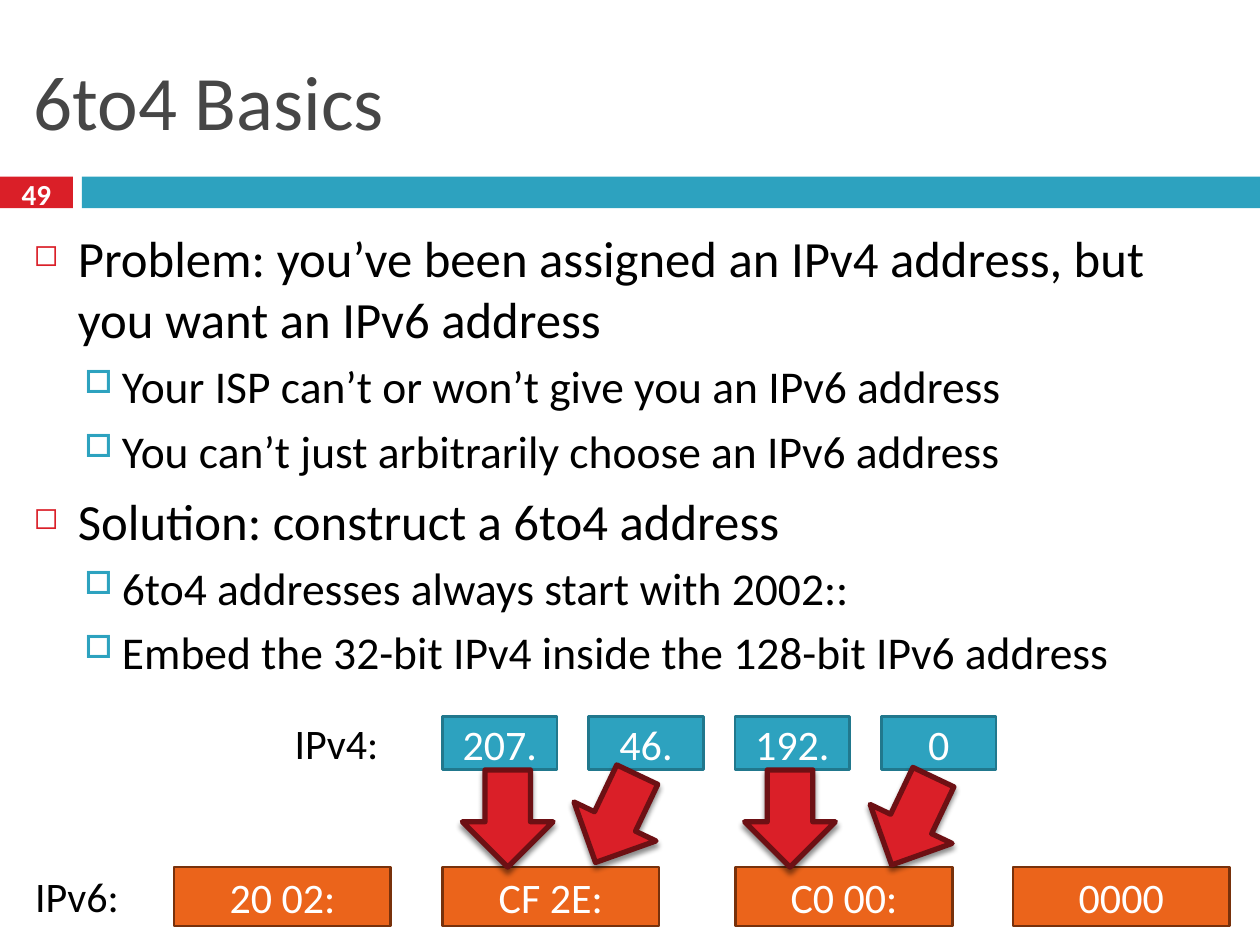
from lxml import etree
from pptx import Presentation
from pptx.dml.color import RGBColor
from pptx.enum import shapes, text
from pptx.oxml.ns import qn
from pptx.util import Cm, Pt

RED = RGBColor(0xDA, 0x1F, 0x28)
DARK_RED = RGBColor(0x6D, 0x10, 0x14)
TEAL = RGBColor(0x2D, 0xA2, 0xBF)
DARK_TEAL = RGBColor(0x21, 0x78, 0x8D)
ORANGE = RGBColor(0xEB, 0x64, 0x1B)
BROWN = RGBColor(0x78, 0x31, 0x0B)
GREY = RGBColor(0x46, 0x46, 0x46)
BLACK = RGBColor(0, 0, 0)
WHITE = RGBColor(0xFF, 0xFF, 0xFF)

# Per level: size, space before, left indent, hanging indent, bullet, colour, bullet size
LEVELS = [
    (29, 7, 0.89, 0.89, "◻", RED, 60),
    (26, 5.5, 1.78, 0.76, "□", TEAL, 70),
]
POINTS = [
    (0, "Problem: you’ve been assigned an IPv4 address, but you want an IPv6 address"),
    (1, "Your ISP can’t or won’t give you an IPv6 address"),
    (1, "You can’t just arbitrarily choose an IPv6 address"),
    (0, "Solution: construct a 6to4 address"),
    (1, "6to4 addresses always start with 2002::"),
    (1, "Embed the 32-bit IPv4 inside the 128-bit IPv6 address"),
]

IPV4_TOP, IPV6_TOP = 14.45, 17.48
IPV4_LEFT, IPV4_STEP = 8.92, 2.95
IPV4_BYTES = ["207.", "46.", "192.", "0"]
IPV6_GROUPS = [(3.51, "20 02:"), (8.92, "CF 2E:"), (14.83, "C0 00:"), (20.42, "0000")]
ARROWS = [(9.32, 15.52, 180), (15.01, 15.52, 180), (11.51, 15.52, 205.4), (17.48, 15.57, 205.4)]


def write(paragraph, words, size=24, color=BLACK, bold=False, align=text.PP_ALIGN.LEFT):
    paragraph.alignment = align
    run = paragraph.add_run()
    run.text = words
    run.font.name = "Calibri"
    run.font.size = Pt(size)
    run.font.bold = bold
    run.font.color.rgb = color


def add_text_box(slide, left, top, width, height, wrap=True):
    box = slide.shapes.add_textbox(Cm(left), Cm(top), Cm(width), Cm(height))
    box.text_frame.word_wrap = wrap
    return box.text_frame


def add_block(slide, kind, left, top, width, height, fill, line=None, line_width=1.5):
    block = slide.shapes.add_shape(kind, Cm(left), Cm(top), Cm(width), Cm(height))
    block.shadow.inherit = False
    block.fill.solid()
    block.fill.fore_color.rgb = fill
    if line is None:
        block.line.fill.background()
    else:
        block.line.color.rgb = line
        block.line.width = Pt(line_width)
    return block


def add_address_box(slide, words, left, top, width, height, fill, line):
    box = add_block(slide, shapes.MSO_SHAPE.RECTANGLE, left, top, width, height, fill, line)
    box.text_frame.vertical_anchor = text.MSO_ANCHOR.MIDDLE
    write(box.text_frame.paragraphs[0], words, color=WHITE, align=text.PP_ALIGN.CENTER)


def add_label(slide, words, left, top):
    frame = add_text_box(slide, left, top, 2.46, 1.27, wrap=False)
    frame.auto_size = text.MSO_AUTO_SIZE.SHAPE_TO_FIT_TEXT
    write(frame.paragraphs[0], words)


def add_arrow(slide, left, top, rotation):
    arrow = add_block(slide, shapes.MSO_SHAPE.UP_ARROW, left, top, 1.83, 1.96, RED, DARK_RED, 3)
    arrow.rotation = rotation
    # Soft shadow straight below
    effects = arrow._element.spPr.find(qn("a:effectLst"))
    shadow = etree.SubElement(effects, qn("a:outerShdw"), blurRad=str(Pt(3)),
                              dist=str(Pt(2.4)), dir="5400000", rotWithShape="0")
    color = etree.SubElement(shadow, qn("a:srgbClr"), val="000000")
    etree.SubElement(color, qn("a:alpha"), val="45000")


def add_point(paragraph, level, words):
    size, space, indent, hanging, bullet, color, bullet_size = LEVELS[level]
    paragraph.level = level
    paragraph.space_before = Pt(space)
    write(paragraph, words, size=size)
    props = paragraph._p.get_or_add_pPr()
    props.set("marL", str(Cm(indent)))
    props.set("indent", str(-Cm(hanging)))
    bullet_color = etree.SubElement(props, qn("a:buClr"))
    etree.SubElement(bullet_color, qn("a:srgbClr"), val=str(color))
    etree.SubElement(props, qn("a:buSzPct"), val=str(bullet_size * 1000))
    etree.SubElement(props, qn("a:buChar"), char=bullet)


def add_header(slide):
    title = slide.shapes.title
    title.left, title.top, title.width, title.height = Cm(0.43), Cm(0.64), Cm(24.56), Cm(2.74)
    title.text_frame.vertical_anchor = text.MSO_ANCHOR.MIDDLE
    write(title.text_frame.paragraphs[0], "6to4 Basics", size=44, color=GREY)

    # Band with the slide number
    for left, width, color in [(0, 1.47, RED), (1.65, 23.75, TEAL)]:
        add_block(slide, shapes.MSO_SHAPE.RECTANGLE, left, 3.56, width, 0.64, color)
    number = add_text_box(slide, 0, 3.48, 1.47, 0.84)
    number.margin_left = number.margin_right = 0
    number.vertical_anchor = text.MSO_ANCHOR.MIDDLE
    write(number.paragraphs[0], "49", size=16.6, color=WHITE, bold=True,
          align=text.PP_ALIGN.CENTER)


def main():
    deck = Presentation()
    deck.slide_width, deck.slide_height = Cm(25.4), Cm(19.05)
    slide = deck.slides.add_slide(deck.slide_layouts[5])
    add_header(slide)

    # Problem and solution
    body = add_text_box(slide, 0.43, 4.45, 24.56, 9.45)
    for index, (level, words) in enumerate(POINTS):
        add_point(body.add_paragraph() if index else body.paragraphs[0], level, words)

    # IPv4 bytes mapped into the IPv6 address
    for left, group in IPV6_GROUPS:
        add_address_box(slide, group, left, IPV6_TOP, 4.37, 1.19, ORANGE, BROWN)
    for index, byte in enumerate(IPV4_BYTES):
        add_address_box(slide, byte, IPV4_LEFT + index * IPV4_STEP, IPV4_TOP, 2.31, 1.07,
                        TEAL, DARK_TEAL)
    add_label(slide, "IPv4:", 5.69, 14.33)
    add_label(slide, "IPv6:", 0.46, 17.42)
    for left, top, rotation in ARROWS:
        add_arrow(slide, left, top, rotation)

    deck.save("out.pptx")


if __name__ == "__main__":
    main()
